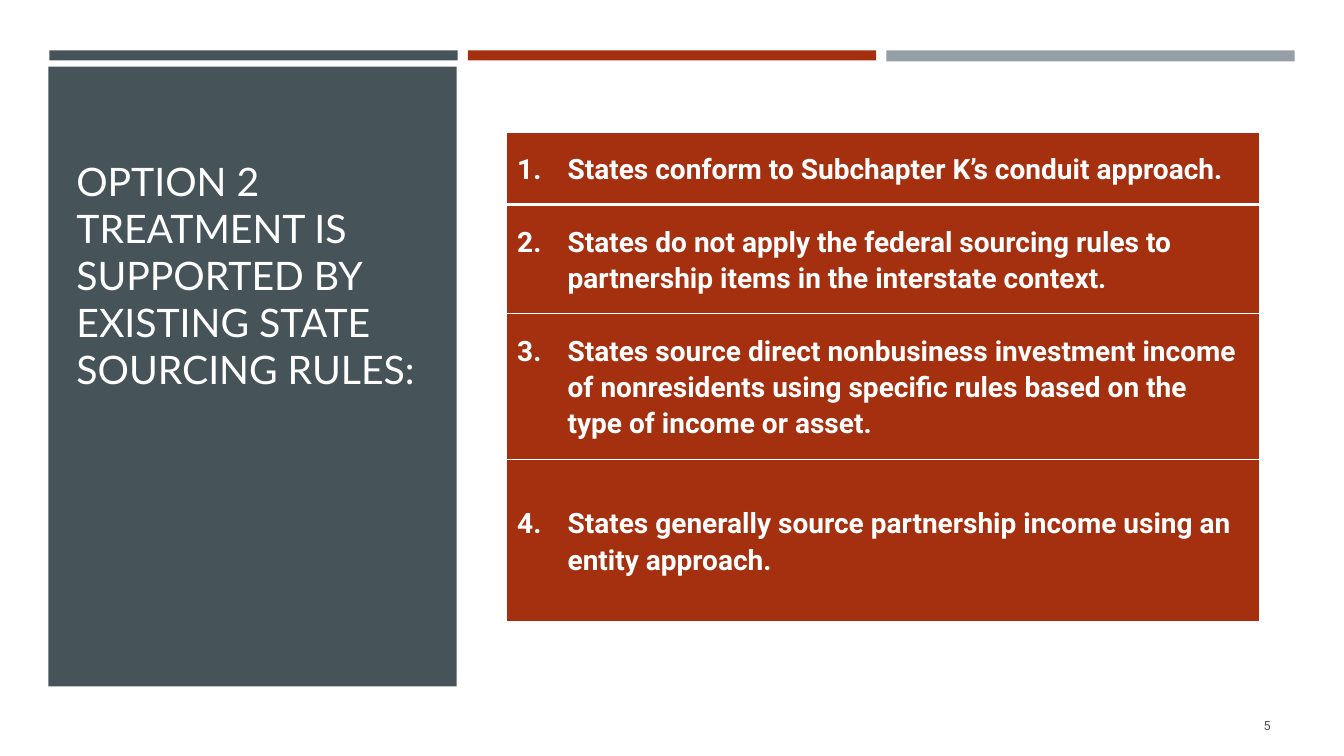
from dataclasses import dataclass

from lxml import etree
from pptx import Presentation
from pptx import util as u
from pptx.dml.color import RGBColor
from pptx.enum import shapes, text
from pptx.oxml import ns

WHITE, SLATE, RUST, GREY = "FFFFFF", "465359", "A5300F", "969FA7"


@dataclass
class Panel:
    left: float
    top: float
    width: float
    height: float
    color: str


@dataclass
class Label:
    left: float
    top: float
    width: float
    height: float
    content: str
    font: str
    size: float
    color: str
    anchor: text.MSO_ANCHOR
    align: text.PP_ALIGN


@dataclass
class Reason:
    content: str
    height: float
    top_border: float = 1
    bottom_border: float = 1


PANELS = [
    Panel(0, 0, 13.33, 7.5, WHITE),
    Panel(0.49, 0.5, 4.05, 0.1, SLATE),
    Panel(4.64, 0.5, 4.05, 0.1, RUST),
    Panel(8.79, 0.5, 4.05, 0.11, GREY),
    Panel(0.48, 0.66, 4.05, 6.15, SLATE),
]
LABELS = [
    Label(0.66, 0.77, 3.73, 3.17,
          "OPTION 2 TREATMENT IS SUPPORTED BY EXISTING STATE SOURCING RULES:",
          "Lato", 28, WHITE, text.MSO_ANCHOR.BOTTOM, text.PP_ALIGN.LEFT),
    Label(11.55, 7, 1.15, 0.4, "5", "Roboto", 9, SLATE,
          text.MSO_ANCHOR.MIDDLE, text.PP_ALIGN.RIGHT),
]
REASONS = [
    Reason("States conform to Subchapter K’s conduit approach.", 0.72, bottom_border=3),
    Reason("States do not apply the federal sourcing rules to partnership items "
           "in the interstate context.", 1.08, top_border=3),
    Reason("States source direct nonbusiness investment income of nonresidents "
           "using specific rules based on the type of income or asset.", 1.45),
    Reason("States generally source partnership income using an entity approach.", 1.61),
]


def rgb(color: str) -> RGBColor:
    return RGBColor.from_string(color)


def add_run(paragraph, content: str, font: str, size: float, color: str,
            bold: bool = False) -> None:
    run = paragraph.add_run()
    run.text = content
    run.font.name = font
    run.font.size = u.Pt(size)
    run.font.bold = bold
    run.font.color.rgb = rgb(color)


def add_panel(slide, panel: Panel) -> None:
    shape = slide.shapes.add_shape(
        shapes.MSO_SHAPE.RECTANGLE, u.Inches(panel.left), u.Inches(panel.top),
        u.Inches(panel.width), u.Inches(panel.height))
    shape.shadow.inherit = False
    shape.fill.solid()
    shape.fill.fore_color.rgb = rgb(panel.color)
    shape.line.fill.background()


def add_label(slide, label: Label) -> None:
    shape = slide.shapes.add_textbox(
        u.Inches(label.left), u.Inches(label.top),
        u.Inches(label.width), u.Inches(label.height))
    frame = shape.text_frame
    frame.word_wrap = True
    frame.vertical_anchor = label.anchor
    paragraph = frame.paragraphs[0]
    paragraph.alignment = label.align
    add_run(paragraph, label.content, label.font, label.size, label.color)


def set_borders(cell, reason: Reason) -> None:
    properties = cell._tc.get_or_add_tcPr()
    widths = {"L": 1, "R": 1, "T": reason.top_border, "B": reason.bottom_border}
    for side, width in widths.items():
        line = etree.SubElement(properties, ns.qn(f"a:ln{side}"), w=str(u.Pt(width)))
        fill = etree.SubElement(line, ns.qn("a:solidFill"))
        etree.SubElement(fill, ns.qn("a:srgbClr"), val=WHITE)


def set_number(paragraph, number: int) -> None:
    properties = paragraph._p.get_or_add_pPr()
    properties.set("marL", str(u.Inches(0.5)))
    properties.set("indent", str(u.Inches(-0.5)))
    etree.SubElement(properties, ns.qn("a:buFont"), typeface="+mj-lt")
    etree.SubElement(properties, ns.qn("a:buAutoNum"),
                     type="arabicPeriod", startAt=str(number))


def fill_cell(cell, reason: Reason, number: int) -> None:
    set_borders(cell, reason)
    cell.fill.solid()
    cell.fill.fore_color.rgb = rgb(RUST)
    cell.vertical_anchor = text.MSO_ANCHOR.MIDDLE
    cell.margin_left = cell.margin_right = u.Inches(0.11)
    cell.margin_top = cell.margin_bottom = u.Inches(0.15)
    paragraph = cell.text_frame.paragraphs[0]
    paragraph.line_spacing = 1.1
    paragraph.space_after = u.Pt(6)
    set_number(paragraph, number)
    add_run(paragraph, reason.content, "Roboto", 20, WHITE, bold=True)


def add_reasons(slide, reasons: list[Reason]) -> None:
    height = sum(reason.height for reason in reasons)
    table = slide.shapes.add_table(
        len(reasons), 1, u.Inches(5.02), u.Inches(1.31),
        u.Inches(7.47), u.Inches(height)).table
    table.first_row = False
    table.horz_banding = False
    for index, reason in enumerate(reasons):
        table.rows[index].height = u.Inches(reason.height)
        fill_cell(table.cell(index, 0), reason, index + 1)


def main() -> None:
    presentation = Presentation()
    presentation.slide_width = u.Inches(13.33)
    presentation.slide_height = u.Inches(7.5)
    slide = presentation.slides.add_slide(presentation.slide_layouts[6])
    for panel in PANELS:
        add_panel(slide, panel)
    for label in LABELS:
        add_label(slide, label)
    add_reasons(slide, REASONS)
    presentation.save("out.pptx")


if __name__ == "__main__":
    main()
